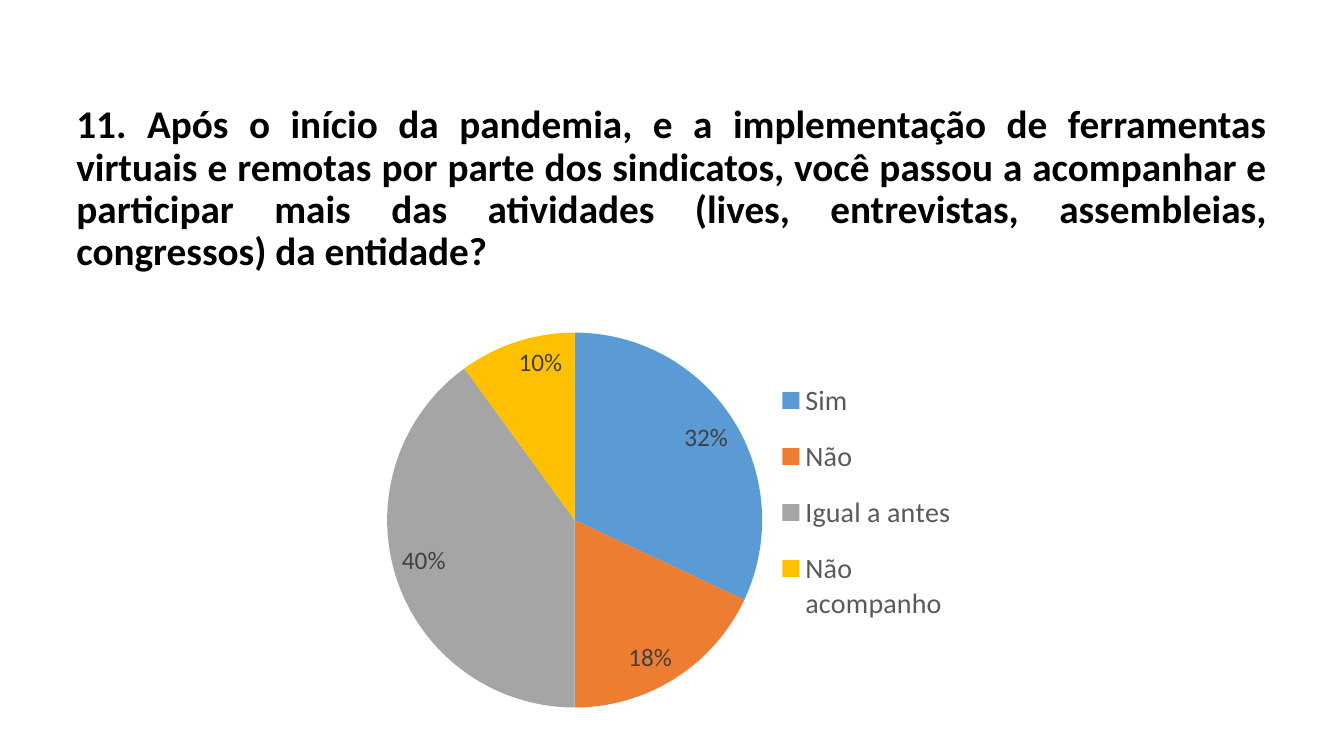
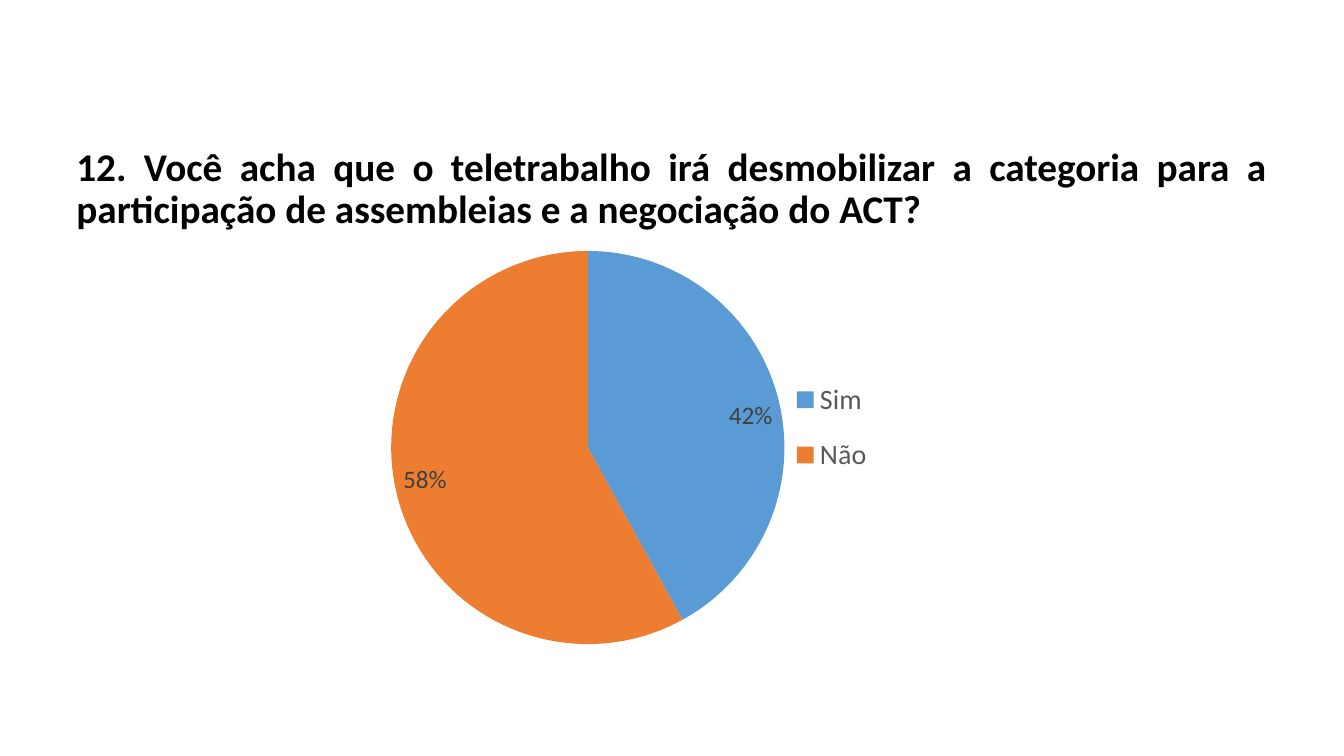
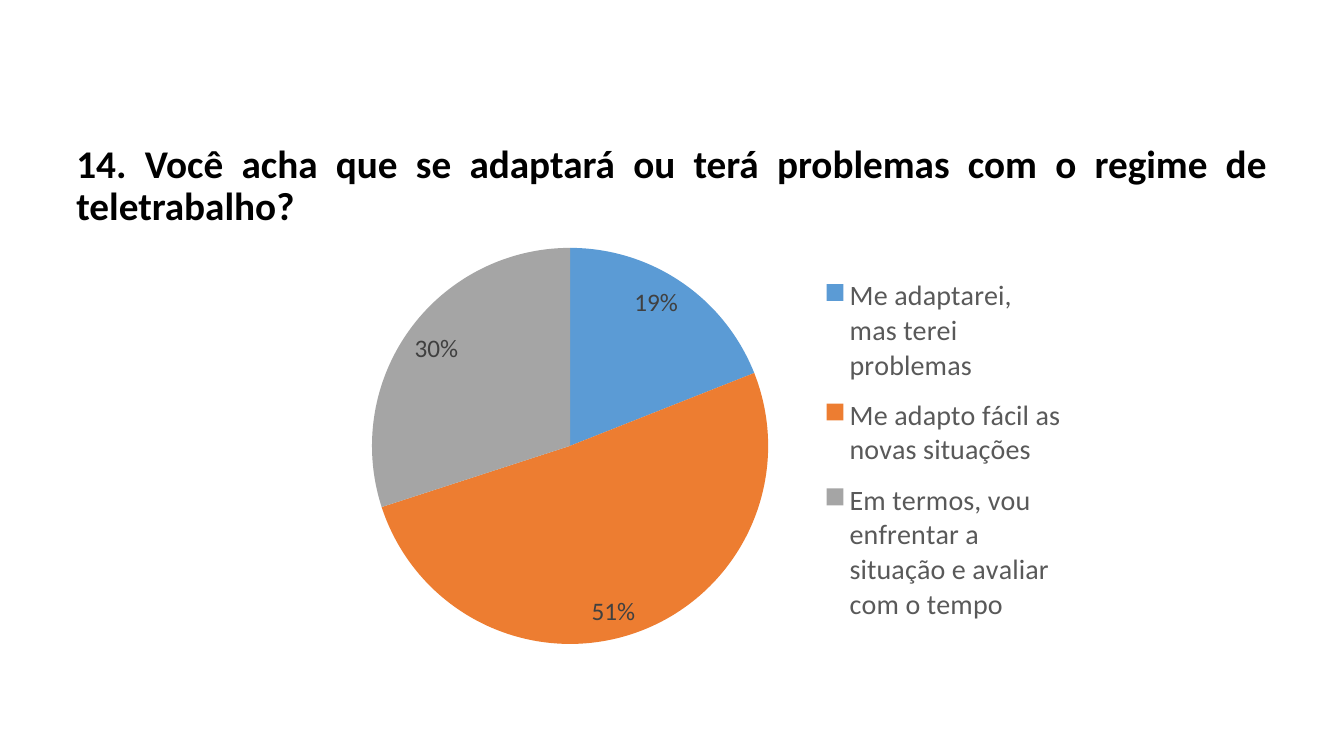
from lxml import etree
from pptx import Presentation
from pptx.chart.data import CategoryChartData
from pptx.dml.color import RGBColor
from pptx.enum.chart import XL_CHART_TYPE, XL_LABEL_POSITION, XL_LEGEND_POSITION
from pptx.enum.text import MSO_ANCHOR, PP_ALIGN
from pptx.oxml.ns import qn
from pptx.util import Inches, Pt

PIE = XL_CHART_TYPE.PIE
INSIDE_END = XL_LABEL_POSITION.INSIDE_END
RIGHT = XL_LEGEND_POSITION.RIGHT
BOTTOM = MSO_ANCHOR.BOTTOM
JUSTIFY = PP_ALIGN.JUSTIFY

FONT = "Calibri"
BLACK = RGBColor(0x00, 0x00, 0x00)
LEGEND_GRAY = RGBColor(0x59, 0x59, 0x59)
LABEL_GRAY = RGBColor(0x40, 0x40, 0x40)
SLICE_COLORS = [
    RGBColor(0x5B, 0x9B, 0xD5),
    RGBColor(0xED, 0x7D, 0x31),
    RGBColor(0xA5, 0xA5, 0xA5),
    RGBColor(0xFF, 0xC0, 0x00),
]
TITLE_LEFT, TITLE_TOP, TITLE_WIDTH = 0.66, 1.41, 12

# Boxes are (left, top, width, height) in inches on the slide.
QUESTIONS = [
    {
        "title": "11. Após o início da pandemia, e a implementação de ferramentas "
                 "virtuais e remotas por parte dos sindicatos, você passou a "
                 "acompanhar e participar mais das atividades (lives, entrevistas, "
                 "assembleias, congressos) da entidade?",
        "answers": {"Sim": 0.32, "Não": 0.18, "Igual a antes": 0.4,
                    "Não acompanho": 0.1},
        "chart": (3.7, 2.77, 5.92, 4.46),
        "pie": (3.84, 3.3, 3.72, 3.72),
        "legend": (7.67, 3.59, 1.85, 2.78),
    },
    {
        "title": "12. Você acha que o teletrabalho irá desmobilizar a categoria "
                 "para a participação de assembleias e a negociação do ACT?",
        "answers": {"Sim": 0.42, "Não": 0.58},
        "chart": (3.74, 2.35, 5.14, 4.17),
        "pie": (3.88, 2.49, 3.9, 3.9),
        "legend": (7.82, 3.59, 0.86, 1.3),
    },
    {
        "title": "14. Você acha que se adaptará ou terá problemas com o regime "
                 "de teletrabalho?",
        "answers": {"Me adaptarei, mas terei problemas": 0.19,
                    "Me adapto fácil as novas situações": 0.51,
                    "Em termos, vou enfrentar a situação e avaliar com o tempo": 0.3},
        "chart": (3.08, 2.32, 7.63, 4.2),
        "pie": (3.69, 2.46, 3.93, 3.93),
        "legend": (8.18, 2.61, 2.36, 3.71),
    },
]


def set_layout(part, index, box, frame):
    """Place a chart part at box, as fractions of the chart frame."""
    for old in part.findall(qn("c:layout")):
        part.remove(old)
    layout = etree.Element(qn("c:layout"))
    manual = etree.SubElement(layout, qn("c:manualLayout"))
    if part.tag == qn("c:plotArea"):
        etree.SubElement(manual, qn("c:layoutTarget")).set("val", "inner")
    for mode in ("xMode", "yMode"):
        etree.SubElement(manual, qn(f"c:{mode}")).set("val", "edge")
    left, top, width, height = box
    frame_left, frame_top, frame_width, frame_height = frame
    fractions = {
        "x": (left - frame_left) / frame_width,
        "y": (top - frame_top) / frame_height,
        "w": width / frame_width,
        "h": height / frame_height,
    }
    for name, fraction in fractions.items():
        etree.SubElement(manual, qn(f"c:{name}")).set("val", f"{fraction:.4f}")
    part.insert(index, layout)


def set_font(font, size, color, bold=False):
    font.name = FONT
    font.size = Pt(size)
    font.bold = bold
    font.color.rgb = color


prs = Presentation()
prs.slide_width = Inches(13.33)
prs.slide_height = Inches(7.5)
blank = prs.slide_layouts[6]

for question in QUESTIONS:
    slide = prs.slides.add_slide(blank)
    frame = question["chart"]

    # The title ends where the chart begins.
    title = slide.shapes.add_textbox(
        Inches(TITLE_LEFT), Inches(TITLE_TOP),
        Inches(TITLE_WIDTH), Inches(frame[1] - TITLE_TOP)).text_frame
    title.word_wrap = True
    title.vertical_anchor = BOTTOM
    title.text = question["title"]
    paragraph = title.paragraphs[0]
    paragraph.alignment = JUSTIFY
    paragraph.line_spacing = 0.9
    set_font(paragraph.runs[0].font, 28, BLACK, bold=True)

    answers = CategoryChartData(number_format="0%")
    answers.categories = list(question["answers"])
    answers.add_series("Series 1", list(question["answers"].values()))
    chart = slide.shapes.add_chart(
        PIE, *(Inches(length) for length in frame), answers).chart
    chart.has_title = False
    set_font(chart.font, 10, BLACK)

    plot = chart.plots[0]
    plot.vary_by_categories = True
    for index, color in zip(range(len(question["answers"])), SLICE_COLORS):
        slice_format = plot.series[0].points[index].format
        slice_format.fill.solid()
        slice_format.fill.fore_color.rgb = color
        slice_format.line.fill.background()

    plot.has_data_labels = True
    labels = plot.data_labels
    labels.show_value = True
    labels.show_percentage = False
    labels.number_format = "0%"
    labels.number_format_is_linked = False
    labels.position = INSIDE_END
    set_font(labels.font, 18, LABEL_GRAY)

    chart.has_legend = True
    legend = chart.legend
    legend.position = RIGHT
    legend.include_in_layout = False
    set_font(legend.font, 20, LEGEND_GRAY)

    set_layout(chart._chartSpace.chart.plotArea, 0, question["pie"], frame)
    set_layout(legend._element, 1, question["legend"], frame)

prs.save("out.pptx")
